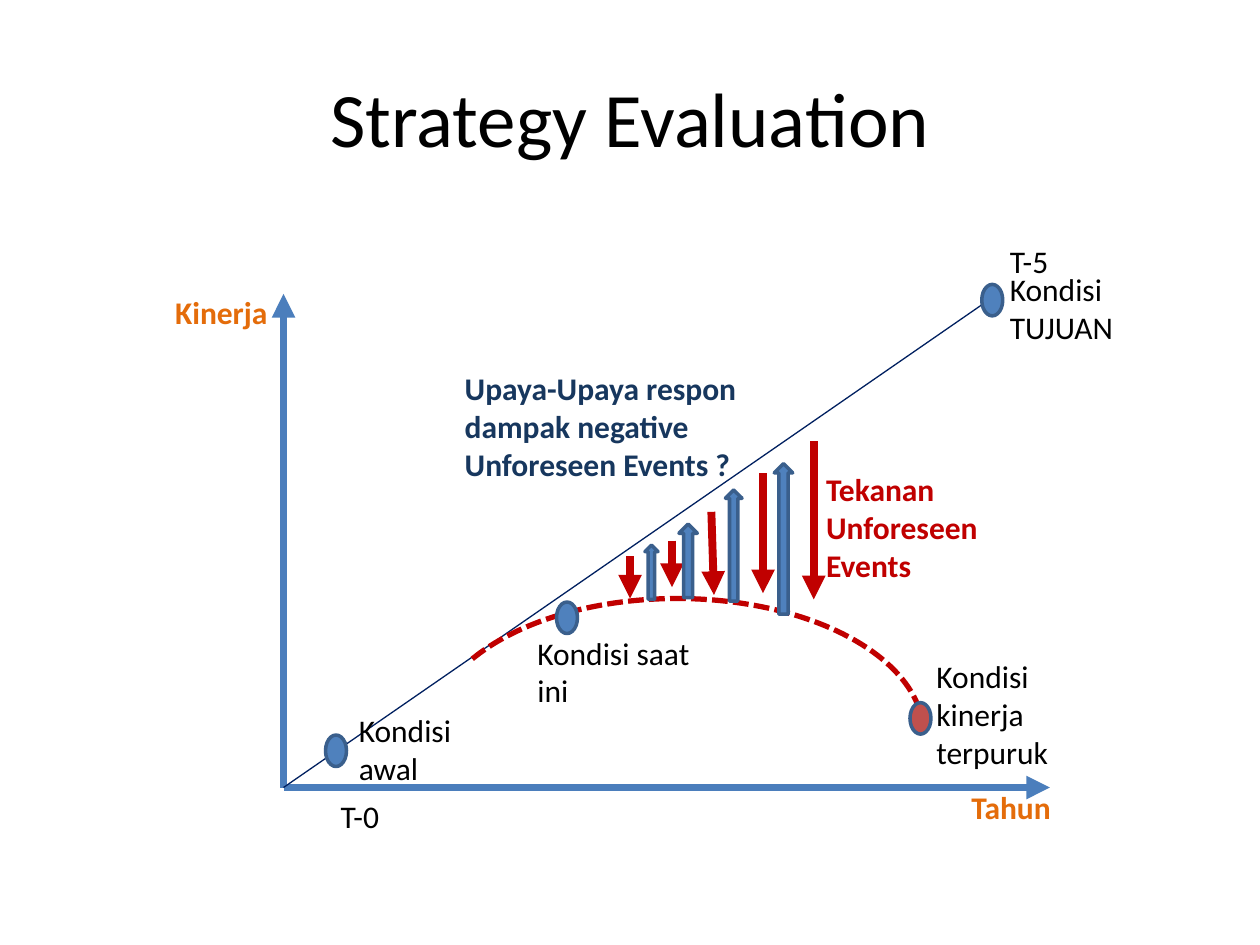
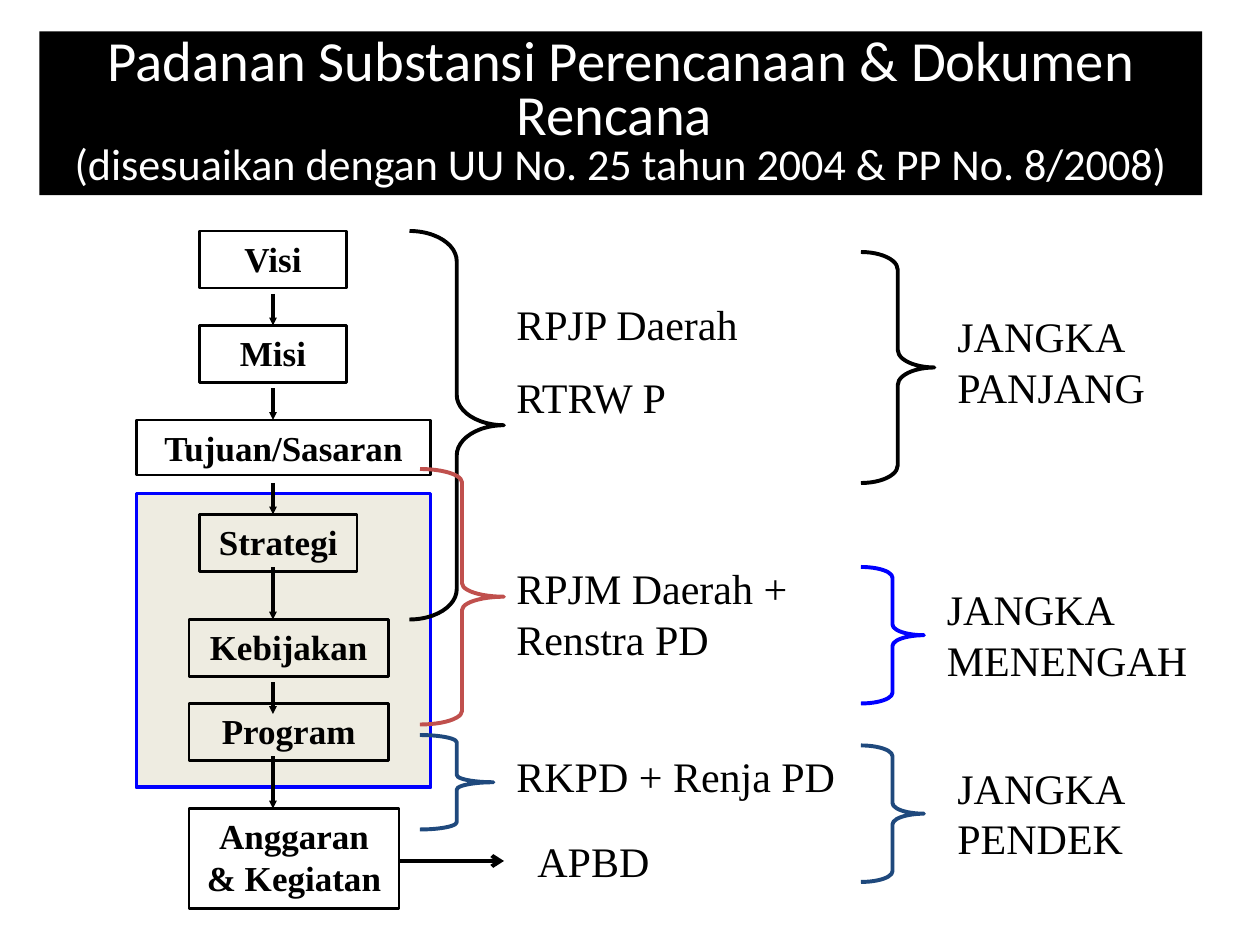
import pptx
import pptx.util
import pptx.dml.color
import pptx.enum.dml
import pptx.enum.shapes
import pptx.enum.text
from lxml import etree
from pptx.oxml.ns import qn

Pt = pptx.util.Pt
RGBColor = pptx.dml.color.RGBColor
SHAPE = pptx.enum.shapes.MSO_SHAPE
ALIGN = pptx.enum.text.PP_ALIGN
ANCHOR = pptx.enum.text.MSO_ANCHOR

BLACK = RGBColor(0x00, 0x00, 0x00)
WHITE = RGBColor(0xFF, 0xFF, 0xFF)
AXIS_BLUE = RGBColor(0x4B, 0x7E, 0xBC)
TARGET_NAVY = RGBColor(0x00, 0x20, 0x60)
RESPONSE_BLUE = RGBColor(0x4F, 0x81, 0xBD)
OUTLINE_BLUE = RGBColor(0x3A, 0x5F, 0x8C)
RESPONSE_NAVY = RGBColor(0x17, 0x37, 0x5E)
PRESSURE_RED = RGBColor(0xC0, 0x00, 0x00)
SLUMP_RED = RGBColor(0xC0, 0x50, 0x4D)
AXIS_ORANGE = RGBColor(0xE4, 0x6C, 0x0A)
PANEL_BEIGE = RGBColor(0xEE, 0xEC, 0xE1)
PURE_BLUE = RGBColor(0x00, 0x00, 0xFF)
SHORT_TERM_BLUE = RGBColor(0x1F, 0x49, 0x7D)

SANS = "Calibri"
SERIF = "Times New Roman"


# Element helpers
def write(shape, text, size, font=SANS, color=BLACK, bold=False,
          align=ALIGN.LEFT, anchor=ANCHOR.TOP, gap=0):
    """Fill a shape with text; gap is the space between paragraphs."""
    frame = shape.text_frame
    frame.word_wrap = True
    frame.vertical_anchor = anchor
    frame.text = text
    for index, paragraph in enumerate(frame.paragraphs):
        paragraph.alignment = align
        paragraph.space_before = Pt(gap if index else 0)
        for run in paragraph.runs:
            run.font.name = font
            run.font.size = Pt(size)
            run.font.bold = bold
            run.font.color.rgb = color
    return frame


def add_label(slide, box, text, size=18, **style):
    label = slide.shapes.add_textbox(*map(Pt, box))
    return write(label, text, size, **style)


def add_figure(slide, kind, box, fill=None, line=None, width=2.25, adjust=()):
    figure = slide.shapes.add_shape(kind, *map(Pt, box))
    figure.shadow.inherit = False
    if fill is None:
        figure.fill.background()
    else:
        figure.fill.solid()
        figure.fill.fore_color.rgb = fill
    if line is None:
        figure.line.fill.background()
    else:
        figure.line.color.rgb = line
        figure.line.width = Pt(width)
    for index, value in enumerate(adjust):
        figure.adjustments[index] = value
    return figure


def add_line(slide, start, end, color, width, head=None, head_size="med"):
    line = slide.shapes.add_connector(
        pptx.enum.shapes.MSO_CONNECTOR.STRAIGHT, *map(Pt, start + end))
    line.line.color.rgb = color
    line.line.width = Pt(width)
    if head:
        etree.SubElement(line.line._get_or_add_ln(), qn("a:tailEnd"),
                         type=head, w=head_size, len=head_size)
    etree.SubElement(line._element.spPr, qn("a:effectLst"))


def add_marker(slide, left, top, fill=RESPONSE_BLUE):
    add_figure(slide, SHAPE.OVAL, (left, top, 12, 18), fill, OUTLINE_BLUE, 2)


def add_brace(slide, box, color, curl):
    add_figure(slide, SHAPE.RIGHT_BRACE, box, line=color, adjust=(curl, 0.5))


# Slide 1: performance over time
def build_evaluation(slide):
    add_label(slide, (36, 21.6, 648, 90), "Strategy Evaluation", 44,
              align=ALIGN.CENTER, anchor=ANCHOR.MIDDLE)

    # Axes, target line and actual course
    origin = (162, 450)
    add_line(slide, origin, (162, 168), AXIS_BLUE, 4.5, "triangle")
    add_line(slide, origin, (600, 450), AXIS_BLUE, 4.5, "triangle")
    add_line(slide, origin, (570, 168), TARGET_NAVY, 0.75)
    course = add_figure(slide, SHAPE.ARC, (246, 342, 282, 156),
                        line=PRESSURE_RED, width=3, adjust=(120.23, 0))
    course.line.dash_style = pptx.enum.dml.MSO_LINE.SQUARE_DOT

    # Conditions along the way
    for left, top in ((318, 344), (186, 420), (561, 162.5)):
        add_marker(slide, left, top)
    add_marker(slide, 520, 401.5, SLUMP_RED)
    for box, text in (
            ((570, 151, 102, 51), "Kondisi TUJUAN"),
            ((300, 358.5, 102, 51), "Kondisi saat ini"),
            ((198, 403, 102, 51), "Kondisi awal"),
            ((528, 372, 102, 73), "Kondisi kinerja terpuruk"),
            ((570, 134.5, 54, 29), "T-5"),
            ((187.5, 452, 54, 29), "T-0")):
        add_label(slide, box, text)

    # Pressure pushes down
    for start, end in (
            ((360, 318), (360, 342)),
            ((384, 309), (384, 335.5)),
            ((406.5, 292.5), (408, 340)),
            ((436, 270.5), (436, 339)),
            ((465, 252), (465, 342.5))):
        add_line(slide, start, end, PRESSURE_RED, 4.5, "triangle")

    # Responses push up
    for box in ((368.5, 311.5, 7.5, 31), (388, 299.5, 10.5, 42),
                (414.5, 280, 9.5, 63.5), (442.5, 265, 10.5, 86)):
        add_figure(slide, SHAPE.UP_ARROW, box, RESPONSE_BLUE, OUTLINE_BLUE, 2)

    # Coloured captions
    for box, text, color in (
            ((465, 265, 136, 73), "Tekanan Unforeseen Events", PRESSURE_RED),
            ((548, 447, 61, 29), "Tahun", AXIS_ORANGE),
            ((93, 164, 78, 29), "Kinerja", AXIS_ORANGE),
            ((258.5, 207.5, 202, 73),
             "Upaya-Upaya respon dampak negative Unforeseen Events ?",
             RESPONSE_NAVY)):
        add_label(slide, box, text, color=color, bold=True)


# Slide 2: planning substance and documents
def build_documents(slide):
    band = add_figure(slide, SHAPE.RECTANGLE, (22.5, 18, 664.5, 93.5), BLACK)
    heading = write(
        band,
        "Padanan Substansi Perencanaan & Dokumen Rencana \v"
        "(disesuaikan dengan UU No. 25 tahun 2004 & PP No. 8/2008)",
        32.4, color=WHITE, align=ALIGN.CENTER, anchor=ANCHOR.MIDDLE)
    heading.paragraphs[0].line_spacing = 0.8
    heading.paragraphs[0].runs[-1].font.size = Pt(25.2)

    # Chain of planning steps
    add_figure(slide, SHAPE.RECTANGLE, (78, 282, 168, 168),
               PANEL_BEIGE, PURE_BLUE)
    for box, text in (
            ((114, 132, 84, 32.5), "Visi"),
            ((114, 186, 84, 32.5), "Misi"),
            ((78, 240, 168, 31.5), "Tujuan/Sasaran"),
            ((114, 294, 90, 32.5), "Strategi"),
            ((108, 354, 114, 32.5), "Kebijakan"),
            ((108, 402, 114, 32.5), "Program"),
            ((108, 462, 120, 57), "Anggaran & Kegiatan")):
        step = add_figure(slide, SHAPE.RECTANGLE, box, line=BLACK, width=1.5)
        write(step, text, 20, font=SERIF, bold=True, align=ALIGN.CENTER)
    for top, bottom in ((168, 186), (222, 240), (276, 294),
                        (324, 354), (390, 408), (432, 462)):
        add_line(slide, (156, top), (156, bottom), BLACK, 2.25,
                 "triangle", "sm")
    add_line(slide, (228, 492), (288, 492), BLACK, 2.25, "arrow")

    # Braces: steps to documents, then documents to time spans
    for box, color, curl in (
            ((234, 132, 54, 222), BLACK, 0.32),
            ((240, 268, 48, 146), SLUMP_RED, 0.16),
            ((240, 420, 42, 54), SHORT_TERM_BLUE, 0.1),
            ((492, 144, 42, 132), BLACK, 0.24),
            ((492, 324, 36, 78), PURE_BLUE, 0.17),
            ((492, 426, 36, 78), SHORT_TERM_BLUE, 0.17)):
        add_brace(slide, box, color, curl)

    # Documents and time spans
    for box, text in (
            ((288, 167, 204, 80), "RPJP Daerah\nRTRW P"),
            ((288, 318, 198, 65.5), "RPJM Daerah + Renstra PD"),
            ((288, 425.5, 210, 36), "RKPD + Renja PD"),
            ((300, 474, 210, 36), "APBD"),
            ((540, 174, 138, 65.5), "JANGKA PANJANG"),
            ((534, 330, 156, 65.5), "JANGKA MENENGAH"),
            ((540, 432, 138, 65.5), "JANGKA PENDEK")):
        add_label(slide, box, text, 24, font=SERIF, gap=13)


def main():
    deck = pptx.Presentation()
    deck.slide_width, deck.slide_height = Pt(720), Pt(540)
    blank = deck.slide_layouts[6]
    for build in (build_evaluation, build_documents):
        build(deck.slides.add_slide(blank))
    deck.save("out.pptx")


if __name__ == "__main__":
    main()
